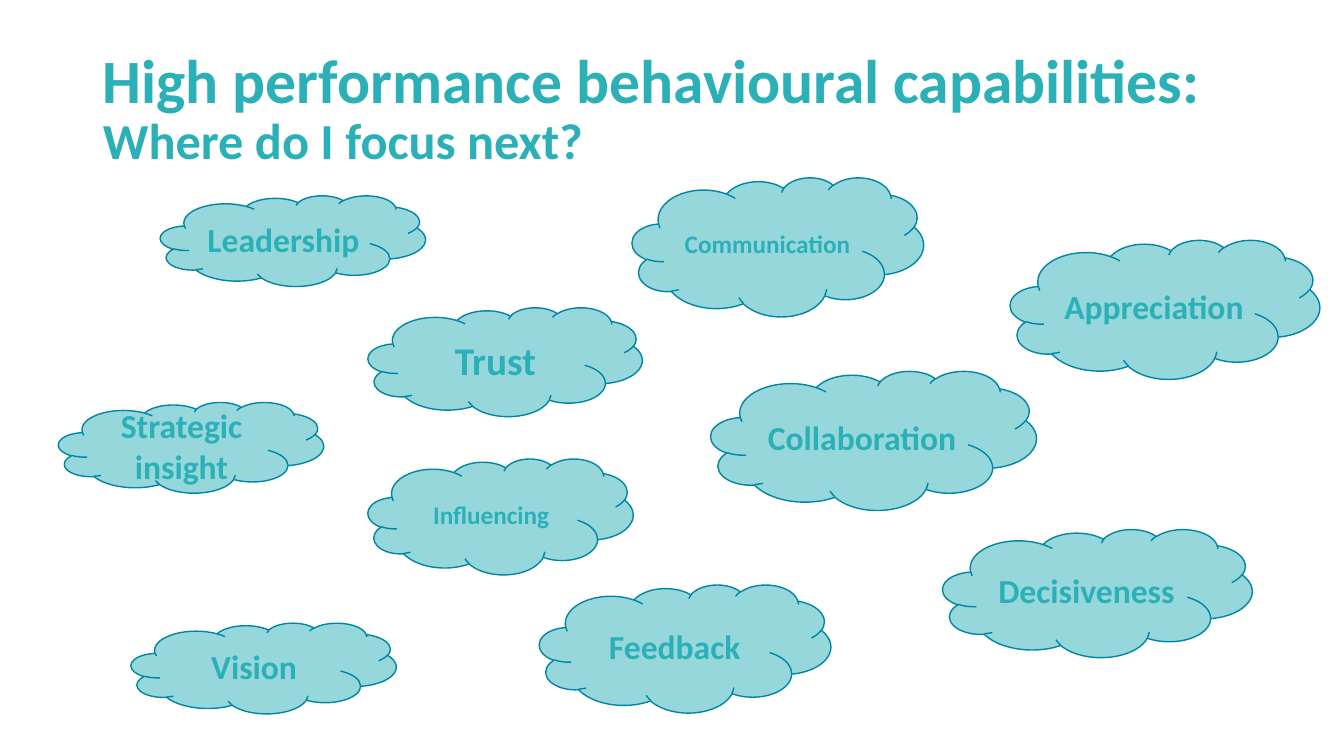
import pptx
import pptx.dml.color
import pptx.enum.shapes
import pptx.enum.text
import pptx.oxml
import pptx.oxml.ns
import pptx.util
from pptx.util import Inches

COLOURS = {"teal": "2CB0B8", "outline": "0085A4"}

# Label, left, top, width, height (inches), text size (points)
CLOUDS = [
    ("Leadership", 1.59, 1.94, 2.63, 0.9, 24),
    ("Communication", 6.27, 1.76, 2.89, 1.38, 18),
    ("Influencing", 3.65, 4.55, 2.63, 1.15, 18),
    ("Collaboration", 7.05, 3.68, 3.23, 1.38, 24),
    ("Appreciation", 10.02, 2.38, 3.07, 1.38, 24),
    ("Feedback", 5.35, 5.8, 2.89, 1.27, 24),
    ("Vision", 1.3, 6.18, 2.63, 0.9, 24),
    ("Strategic insight", 0.58, 3.99, 2.63, 0.9, 24),
    ("Decisiveness", 9.35, 5.25, 3.07, 1.27, 24),
    ("Trust", 3.65, 3.05, 2.72, 1.08, 28),
]


class CapabilitySlide:
    font_name = "Calibri"
    cloud_opacity = 50

    def __init__(self, presentation):
        self.slide = presentation.slides.add_slide(presentation.slide_layouts[5])

    def colour(self, name):
        return pptx.dml.color.RGBColor.from_string(COLOURS[name])

    def place(self, shape, left, top, width, height):
        shape.left, shape.top = Inches(left), Inches(top)
        shape.width, shape.height = Inches(width), Inches(height)

    def format_text(self, paragraph, size, alignment):
        paragraph.alignment = alignment
        font = paragraph.font
        font.name, font.size, font.bold = self.font_name, pptx.util.Pt(size), True
        font.color.rgb = self.colour("teal")

    def title(self, lines, left, top, width, height):
        shape = self.slide.shapes.title
        self.place(shape, left, top, width, height)
        frame = shape.text_frame
        frame.text = "\n".join(text for text, size in lines)
        frame.word_wrap = True
        frame.auto_size = pptx.enum.text.MSO_AUTO_SIZE.NONE
        frame.vertical_anchor = pptx.enum.text.MSO_ANCHOR.MIDDLE
        for paragraph, (text, size) in zip(frame.paragraphs, lines):
            self.format_text(paragraph, size, pptx.enum.text.PP_ALIGN.LEFT)
            paragraph.line_spacing = 0.9

    def cloud(self, label, left, top, width, height, size):
        shape = self.slide.shapes.add_shape(
            pptx.enum.shapes.MSO_SHAPE.CLOUD,
            Inches(left), Inches(top), Inches(width), Inches(height))
        shape.shadow.inherit = False
        shape.line.color.rgb = self.colour("outline")
        shape.line.width = pptx.util.Pt(1)
        shape.fill.solid()
        shape.fill.fore_color.rgb = self.colour("teal")
        # Half-transparent fill
        fill_colour = shape.fill._xPr.find(".//" + pptx.oxml.ns.qn("a:srgbClr"))
        alpha = pptx.oxml.parse_xml(
            f'<a:alpha {pptx.oxml.ns.nsdecls("a")} val="{self.cloud_opacity * 1000}"/>')
        fill_colour.append(alpha)
        # Centred label
        frame = shape.text_frame
        frame.text = label
        frame.word_wrap = True
        frame.vertical_anchor = pptx.enum.text.MSO_ANCHOR.MIDDLE
        self.format_text(frame.paragraphs[0], size, pptx.enum.text.PP_ALIGN.CENTER)


def main():
    presentation = pptx.Presentation()
    presentation.slide_width = Inches(13.33)
    presentation.slide_height = Inches(7.5)
    slide = CapabilitySlide(presentation)

    # Heading
    slide.title([("High performance behavioural capabilities:", 44),
                 ("Where do I focus next?", 36)], 0.92, 0.37, 11.5, 1.45)

    # Capability clouds
    for cloud in CLOUDS:
        slide.cloud(*cloud)

    presentation.save("out.pptx")


if __name__ == "__main__":
    main()
